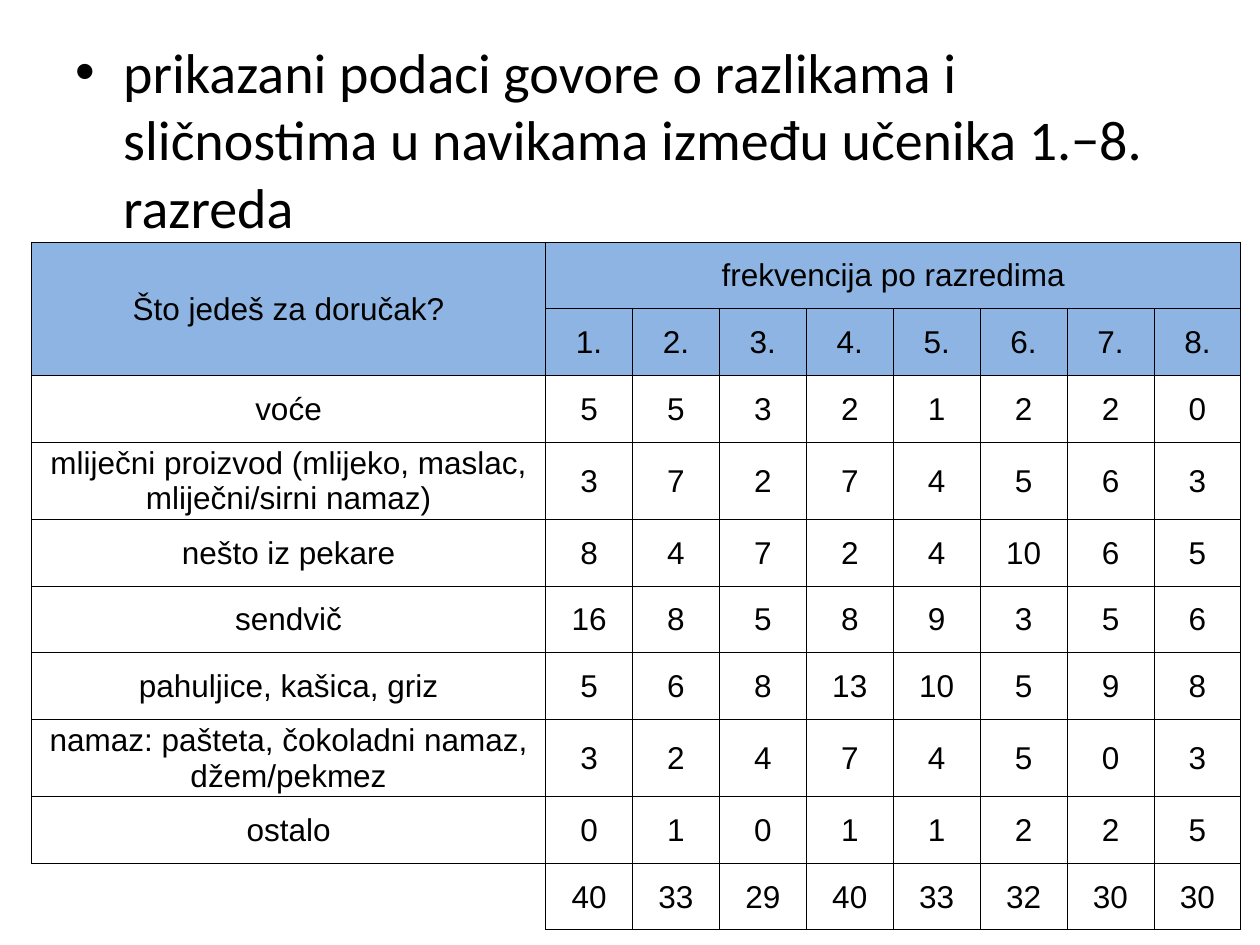
from lxml.etree import SubElement
from pptx import Presentation
from pptx.dml.color import RGBColor
from pptx.enum.text import MSO_ANCHOR, PP_ALIGN
from pptx.oxml.ns import qn
from pptx.util import Inches, Pt

BLACK = RGBColor(0x00, 0x00, 0x00)
BLUE = RGBColor(0x8D, 0xB4, 0xE2)

WIDE, HIGH = Inches(10), Inches(7.5)
INDENT = Inches(0.38)
LABEL, COUNT = Inches(4.08), Inches(0.69)
LOW, TALL = Inches(0.53), Inches(0.6)
INSET = Inches(0.01)

LEAD = ("prikazani podaci govore o razlikama i sličnostima "
        "u navikama između učenika 1.−8. razreda")
FOODS = {
    "voće": [5, 5, 3, 2, 1, 2, 2, 0],
    "mliječni proizvod (mlijeko, maslac, mliječni/sirni namaz)":
        [3, 7, 2, 7, 4, 5, 6, 3],
    "nešto iz pekare": [8, 4, 7, 2, 4, 10, 6, 5],
    "sendvič": [16, 8, 5, 8, 9, 3, 5, 6],
    "pahuljice, kašica, griz": [5, 6, 8, 13, 10, 5, 9, 8],
    "namaz: pašteta, čokoladni namaz, džem/pekmez":
        [3, 2, 4, 7, 4, 5, 0, 3],
    "ostalo": [0, 1, 0, 1, 1, 2, 2, 5],
}
HEAD = 2  # header rows
WRAP = 40  # labels longer than this take two lines


def style(para, name, size):
    para.font.name = name
    para.font.size = Pt(size)
    para.font.color.rgb = BLACK


def add_lead(slide):
    box = slide.shapes.add_textbox(
        int(WIDE * 0.05), Inches(0.25), int(WIDE * 0.9), Inches(1.65))
    frame = box.text_frame
    frame.word_wrap = True
    para = frame.paragraphs[0]
    para.text = LEAD
    para.space_before = Pt(6.4)
    style(para, "Calibri", 32)
    # Hanging bullet
    props = para._p.get_or_add_pPr()
    props.set("marL", str(INDENT))
    props.set("indent", str(-INDENT))
    SubElement(props, qn("a:buFont")).set("typeface", "Arial")
    SubElement(props, qn("a:buChar")).set("char", "•")


def set_edges(cell, drawn):
    """Draw the sides named in drawn and hide the others."""
    props = cell._tc.get_or_add_tcPr()
    for spot, side in enumerate("LRTB"):
        line = SubElement(props, qn(f"a:ln{side}"), w=str(Pt(0.5)))
        if side in drawn:
            fill = SubElement(line, qn("a:solidFill"))
            SubElement(fill, qn("a:srgbClr"), val=str(BLACK))
        else:
            SubElement(line, qn("a:noFill"))
        props.insert(spot, line)  # edges go before the fill


def fill_cell(cell, text, tint=None, drawn="LRTB"):
    cell.margin_left = cell.margin_right = cell.margin_top = INSET
    cell.margin_bottom = 0
    cell.vertical_anchor = MSO_ANCHOR.MIDDLE
    para = cell.text_frame.paragraphs[0]
    para.text = str(text)
    para.alignment = PP_ALIGN.CENTER
    style(para, "Arial", 18)
    if tint is None:
        cell.fill.background()
    else:
        cell.fill.solid()
        cell.fill.fore_color.rgb = tint
    set_edges(cell, drawn)


def add_grid(slide):
    # Two header rows, one row per food, then the column totals
    sums = [sum(col) for col in zip(*FOODS.values())]
    years = [f"{n}." for n in range(1, len(sums) + 1)]
    rows = [["Što jedeš za doručak?", "frekvencija po razredima"]
            + [""] * (len(sums) - 1),
            ["", *years],
            *([name, *nums] for name, nums in FOODS.items()),
            ["", *sums]]
    tops = [TALL if len(row[0]) > WRAP else LOW for row in rows]
    cols = [LABEL] + [COUNT] * len(sums)

    table = slide.shapes.add_table(
        len(rows), len(cols), Inches(0.25), Inches(1.92),
        sum(cols), sum(tops)).table
    table.first_row = table.horz_banding = False
    for col, width in zip(table.columns, cols):
        col.width = width
    for row, height in zip(table.rows, tops):
        row.height = height

    last = len(rows) - 1
    for r, row in enumerate(rows):
        for c, text in enumerate(row):
            blank = r == last and c == 0
            fill_cell(table.cell(r, c), text,
                      BLUE if r < HEAD else None,
                      "TR" if blank else "LRTB")

    # Header spans
    table.cell(0, 0).merge(table.cell(1, 0))
    table.cell(0, 1).merge(table.cell(0, len(sums)))


def main():
    deck = Presentation()
    deck.slide_width, deck.slide_height = WIDE, HIGH
    slide = deck.slides.add_slide(deck.slide_layouts[6])
    add_lead(slide)
    add_grid(slide)
    deck.save("out.pptx")


if __name__ == "__main__":
    main()
